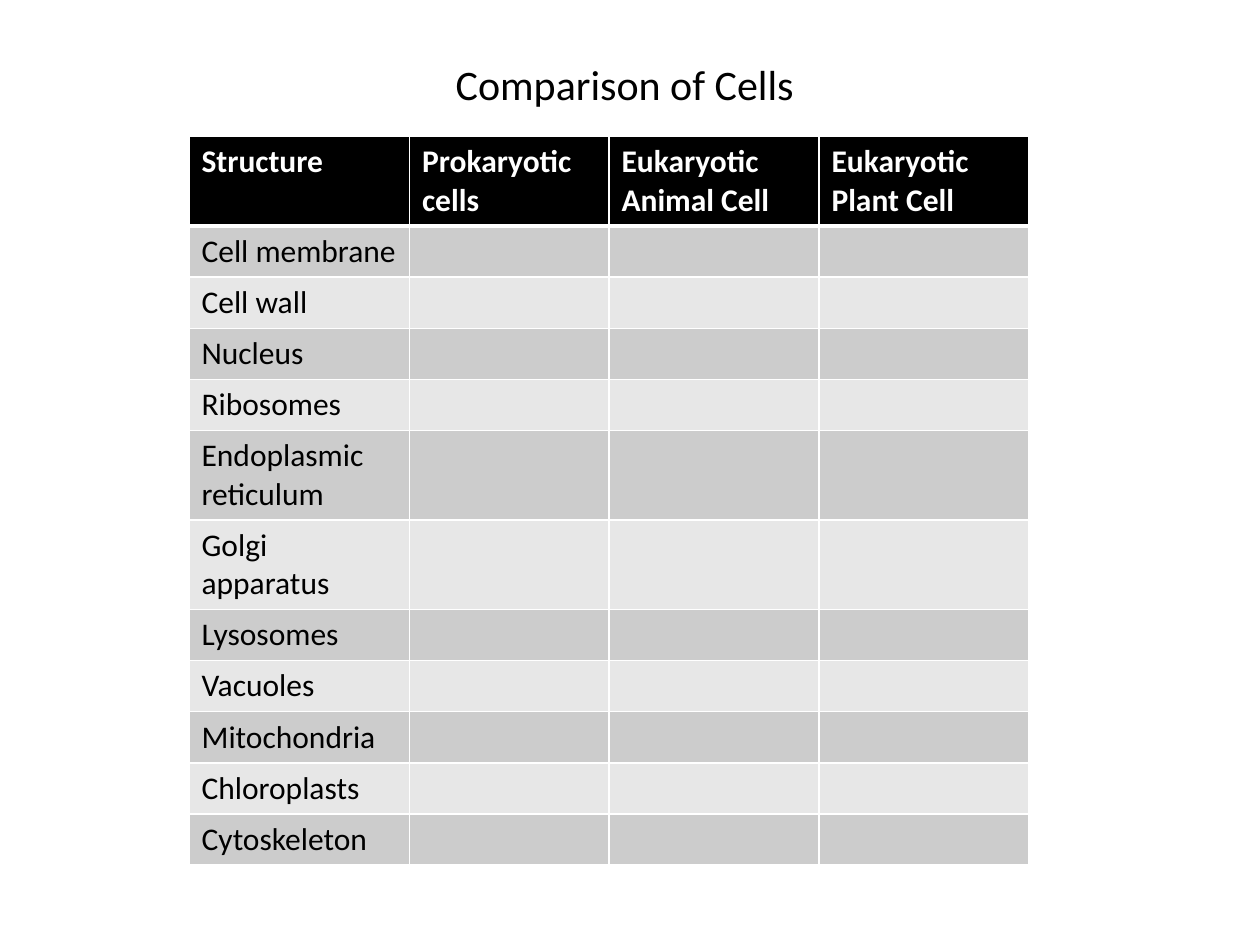
from lxml.etree import SubElement
from pptx import Presentation
from pptx.dml.color import RGBColor
from pptx.enum.text import MSO_ANCHOR, PP_ALIGN
from pptx.oxml.ns import qn
from pptx.util import Inches, Pt

COLOURS = {
    "ink": "000000",
    "paper": "FFFFFF",
    "odd": "CCCCCC",
    "even": "E7E7E7",
}
TITLE_FORMAT = {"name": "Calibri", "size": Pt(24), "bold": False}
HEADER_FORMAT = {"name": "Calibri", "size": Pt(18), "bold": True}
BODY_FORMAT = {**HEADER_FORMAT, "bold": False}

HEADINGS = ["Structure", "Prokaryotic cells", "Eukaryotic Animal Cell", "Eukaryotic Plant Cell"]
STRUCTURES = [
    "Cell membrane", "Cell wall", "Nucleus", "Ribosomes",
    "Endoplasmic reticulum", "Golgi apparatus", "Lysosomes", "Vacuoles",
    "Mitochondria", "Chloroplasts", "Cytoskeleton",
]


class SlideBuilder:
    """Places elements on a grid of 120 columns by 90 rows."""

    def __init__(self, deck):
        self.unit = deck.slide_width / 120
        self.slide = deck.slides.add_slide(deck.slide_layouts[5])

    def length(self, units):
        return round(units * self.unit)

    def add_text(self, para, text, style, colour):
        span = para.add_run()
        span.text = text
        for name, value in style.items():
            setattr(span.font, name, value)
        span.font.color.rgb = RGBColor.from_string(COLOURS[colour])

    def title(self, text, place):
        box = self.slide.shapes.title
        for name, units in zip(("left", "top", "width", "height"), place):
            setattr(box, name, self.length(units))
        frame = box.text_frame
        frame.word_wrap = True
        frame.vertical_anchor = MSO_ANCHOR.TOP
        para = frame.paragraphs[0]
        para.alignment = PP_ALIGN.CENTER
        self.add_text(para, text, TITLE_FORMAT, "ink")

    def borders(self, cell, widths):
        """Draw white cell edges; widths maps an edge tag to points."""
        properties = cell._tc.get_or_add_tcPr()
        for edge, points in widths.items():
            line = SubElement(properties, qn(f"a:{edge}"), w=str(Pt(points)))
            fill = SubElement(line, qn("a:solidFill"))
            SubElement(fill, qn("a:srgbClr"), val=COLOURS["paper"])

    def table(self, rows, left, top, columns, row_height):
        table = self.slide.shapes.add_table(
            len(rows), len(columns), self.length(left), self.length(top),
            self.length(sum(columns)), self.length(row_height * len(rows)),
        ).table
        for column, width in zip(table.columns, columns):
            column.width = self.length(width)
        for index, texts in enumerate(rows):
            header = index == 0
            shade = "ink" if header else "odd" if index % 2 else "even"
            style, colour = (HEADER_FORMAT, "paper") if header else (BODY_FORMAT, "ink")
            widths = {"lnL": 1, "lnR": 1, "lnT": 3 if index == 1 else 1, "lnB": 3 if header else 1}
            table.rows[index].height = self.length(row_height)
            for cell, text in zip(table.rows[index].cells, texts):
                self.borders(cell, widths)
                cell.fill.solid()
                cell.fill.fore_color.rgb = RGBColor.from_string(COLOURS[shade])
                if text:
                    self.add_text(cell.text_frame.paragraphs[0], text, style, colour)


def main():
    deck = Presentation()
    deck.slide_width, deck.slide_height = Inches(10), Inches(7.5)
    page = SlideBuilder(deck)
    blanks = [""] * (len(HEADINGS) - 1)
    rows = [HEADINGS] + [[structure, *blanks] for structure in STRUCTURES]
    page.table(rows, left=18, top=13, columns=[21, 19, 20, 20], row_height=4.87)
    page.title("Comparison of Cells", (21, 5, 77, 6))
    deck.save("out.pptx")


if __name__ == "__main__":
    main()
